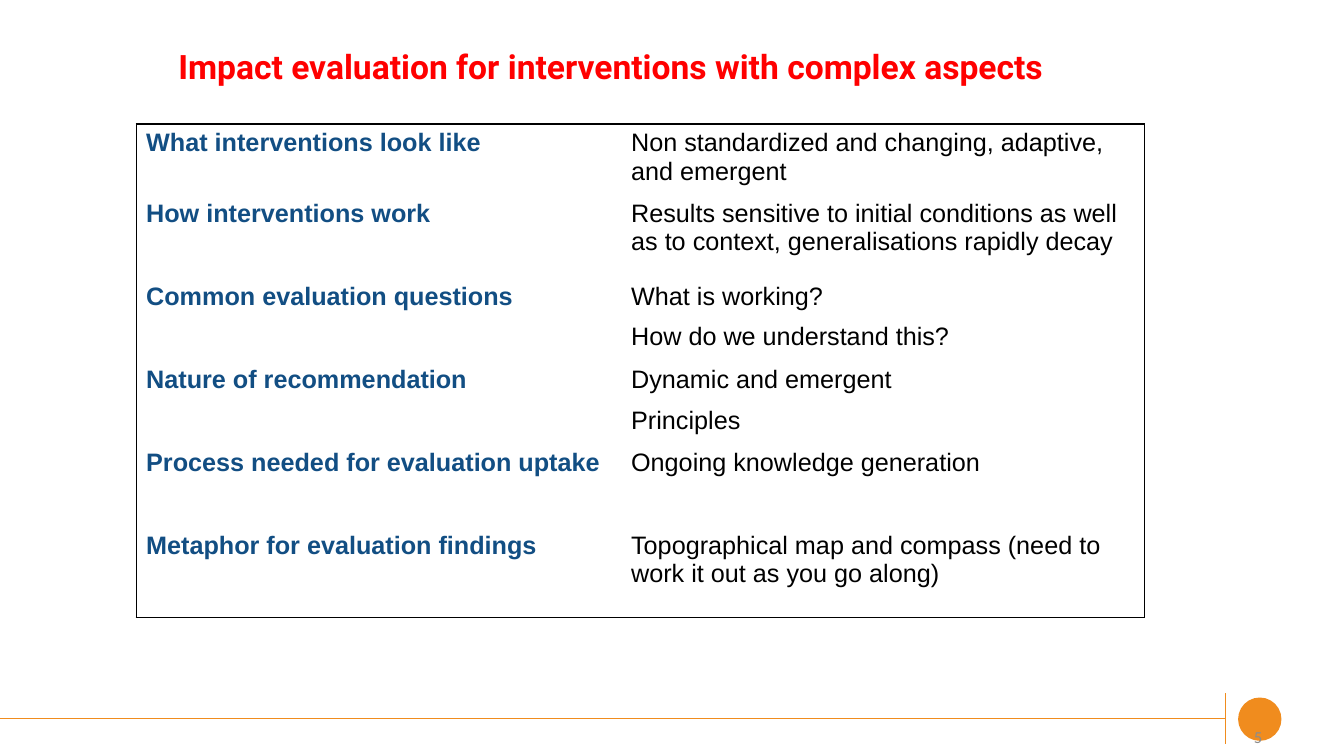
from dataclasses import dataclass

from lxml import etree
from pptx import Presentation, util as u
from pptx.dml.color import RGBColor
from pptx.enum import shapes, text
from pptx.oxml.ns import qn

NO_STYLE = "{2D5ABB26-0587-4C30-8999-92F81FD0307C}"


@dataclass(frozen=True)
class Theme:
    accent: str = "F08C1E"
    title: str = "FF0000"
    aspect: str = "124E83"
    ink: str = "000000"
    muted: str = "8C8C8C"
    title_font: str = "Roboto"
    table_font: str = "Arial"
    number_font: str = "Calibri"
    title_size: int = 24
    table_size: int = 18
    number_size: int = 12
    rule: float = 0.5
    border: float = 1


THEME = Theme()
COLUMNS = (4.81, 5.19)
ASPECTS = [
    (0.47, "What interventions look like",
     ["Non standardized and changing, adaptive, and emergent"]),
    (0.82, "How interventions work",
     ["Results sensitive to initial conditions as well as to context, "
      "generalisations rapidly decay"]),
    (0.83, "Common evaluation questions",
     ["What is working?", "How do we understand this?"]),
    (0.82, "Nature of recommendation", ["Dynamic and emergent", "Principles"]),
    (0.82, "Process needed for evaluation uptake", ["Ongoing knowledge generation"]),
    (0.9, "Metaphor for evaluation findings",
     ["Topographical map and compass (need to work it out as you go along)"]),
]


def inches(*lengths):
    return [u.Inches(length) for length in lengths]


def write(frame, lines, font, size, color, bold=False, **paragraph_format):
    for i, line in enumerate(lines):
        paragraph = frame.paragraphs[0] if i == 0 else frame.add_paragraph()
        for key, value in paragraph_format.items():
            setattr(paragraph, key, value)
        run = paragraph.add_run()
        run.text = line
        for key, value in dict(name=font, size=u.Pt(size), bold=bold).items():
            setattr(run.font, key, value)
        run.font.color.rgb = RGBColor.from_string(color)


def add_label(slide, box, line, **style):
    frame = slide.shapes.add_textbox(*inches(*box)).text_frame
    frame.word_wrap = True
    frame.vertical_anchor = text.MSO_ANCHOR.MIDDLE
    write(frame, [line], **style)


def add_rule(slide, start, end):
    rule = slide.shapes.add_connector(
        shapes.MSO_CONNECTOR.STRAIGHT, *inches(*start, *end))
    rule.line.color.rgb = RGBColor.from_string(THEME.accent)
    rule.line.width = u.Pt(THEME.rule)
    etree.SubElement(rule._element.spPr, qn("a:effectLst"))


def add_footer(slide, box, number):
    """Draw the rules, the disc and the page number in the bottom strip."""
    left, top, width, height = box
    divider = left + width - 1.18
    middle = top + height / 2
    disc = slide.shapes.add_shape(
        shapes.MSO_SHAPE.OVAL, *inches(divider + 0.13, top + 0.04, 0.43, 0.43))
    disc.shadow.inherit = False
    disc.fill.solid()
    disc.fill.fore_color.rgb = RGBColor.from_string(THEME.accent)
    disc.line.fill.background()
    add_rule(slide, (divider, top), (divider, top + height))
    add_rule(slide, (left, middle), (divider, middle))
    add_label(slide, (divider - 2.64, top + 0.31, 3.11, 0.24), number,
              font=THEME.number_font, size=THEME.number_size, color=THEME.muted,
              alignment=text.PP_ALIGN.RIGHT)


def add_borders(cell, sides):
    """Line the given sides of a cell: L, R, T, B in that order."""
    properties = cell._tc.get_or_add_tcPr()
    for i, side in enumerate(sides):
        line = etree.Element(qn(f"a:ln{side}"), w=str(u.Pt(THEME.border)))
        fill = etree.SubElement(line, qn("a:solidFill"))
        etree.SubElement(fill, qn("a:srgbClr"), val=THEME.ink)
        properties.insert(i, line)


def add_aspects(slide, box):
    """Draw the table of aspects with a border around its outside only."""
    table = slide.shapes.add_table(
        len(ASPECTS), len(COLUMNS), *inches(*box)).table
    table._tbl.tblPr[0].text = NO_STYLE
    table.first_row = table.horz_banding = False
    for column, width in zip(table.columns, COLUMNS):
        column.width = u.Inches(width)
    last = len(ASPECTS) - 1
    for r, (height, aspect, answers) in enumerate(ASPECTS):
        table.rows[r].height = u.Inches(height)
        edge = "T" if r == 0 else "B" if r == last else ""
        columns = (([aspect], THEME.aspect, True, "L"),
                   (answers, THEME.ink, False, "R"))
        for c, (lines, color, bold, side) in enumerate(columns):
            cell = table.cell(r, c)
            cell.fill.background()
            write(cell.text_frame, lines, THEME.table_font, THEME.table_size,
                  color, bold, space_before=u.Pt(THEME.table_size / 2))
            add_borders(cell, side + edge)


def main():
    deck = Presentation()
    deck.slide_width, deck.slide_height = inches(13.33, 7.5)
    slide = deck.slides.add_slide(deck.slide_layouts[6])
    add_footer(slide, (0, 6.88, 13.33, 0.5), "5")
    add_label(slide, (1.67, 0.3, 10, 0.77),
              "Impact evaluation for interventions with complex aspects",
              font=THEME.title_font, size=THEME.title_size, color=THEME.title,
              bold=True, line_spacing=0.9)
    add_aspects(slide, (1.35, 1.23, sum(COLUMNS), sum(row[0] for row in ASPECTS)))
    deck.save("out.pptx")


if __name__ == "__main__":
    main()
